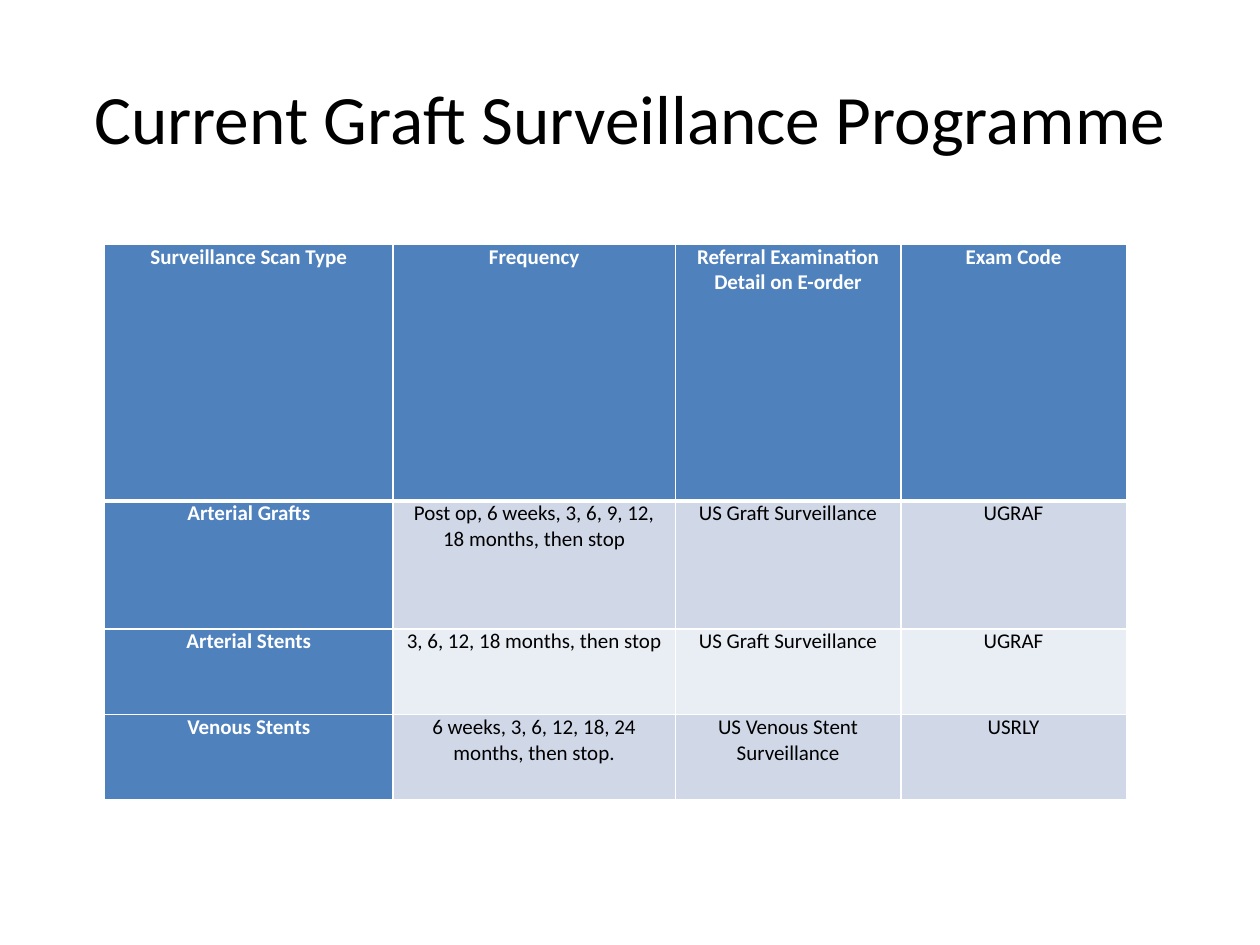
from dataclasses import dataclass

from lxml import etree
from pptx import Presentation
from pptx.dml.color import RGBColor
from pptx.enum.text import MSO_ANCHOR, PP_ALIGN
from pptx.oxml.ns import qn
from pptx.util import Inches, Pt

CENTER = PP_ALIGN.CENTER
MIDDLE = MSO_ANCHOR.MIDDLE
TITLE_ONLY = 5
SLIDE_SIZE = (10, 7.5)
TITLE_BOX = (0.5, 0.3, 9, 1.25)
SCHEDULE_BOX = (0.83, 1.94, 8.11, 4.41)
COLUMN_WEIGHTS = (2.29, 2.24, 1.79, 1.79)
ROW_WEIGHTS = (6, 3, 2, 2)
SCHEDULE = (
    ("Surveillance Scan Type", "Frequency",
     "Referral Examination Detail on E-order", "Exam Code"),
    ("Arterial Grafts", "Post op, 6 weeks, 3, 6, 9, 12, 18 months, then stop",
     "US Graft Surveillance", "UGRAF"),
    ("Arterial Stents", "3, 6, 12, 18 months, then stop",
     "US Graft Surveillance", "UGRAF"),
    ("Venous Stents", "6 weeks, 3, 6, 12, 18, 24 months, then stop.",
     "US Venous Stent Surveillance", "USRLY"),
)


@dataclass(frozen=True)
class Theme:
    """Colours, font and sizes of the slide."""
    font: str = "Calibri"
    ink: str = "000000"
    paper: str = "FFFFFF"
    heading: str = "4F81BD"
    bands: tuple = ("D0D8E8", "E9EDF4")
    title_size: float = 39.6
    body_size: float = 12
    rule: float = 1
    header_rule: float = 3


THEME = Theme()


def style_text(frame, size, color, bold=False):
    """Centre the paragraphs and format their runs."""
    for paragraph in frame.paragraphs:
        paragraph.alignment = CENTER
        for run in paragraph.runs:
            run.font.name = THEME.font
            run.font.size = Pt(size)
            run.font.bold = bold
            run.font.color.rgb = RGBColor.from_string(color)


def add_border(cell, side, width):
    """Draw one side of a cell in the paper colour."""
    properties = cell._tc.get_or_add_tcPr()
    line = etree.SubElement(properties, qn(f"a:ln{side}"), w=str(Pt(width)))
    fill = etree.SubElement(line, qn("a:solidFill"))
    etree.SubElement(fill, qn("a:srgbClr"), val=THEME.paper)


def add_title(slide, box, wording):
    """Place the slide title in its box."""
    title = slide.shapes.title
    title.left, title.top, title.width, title.height = map(Inches, box)
    title.text_frame.text = wording
    title.text_frame.word_wrap = True
    title.text_frame.vertical_anchor = MIDDLE
    style_text(title.text_frame, THEME.title_size, THEME.ink)


def fill_cell(cell, wording, row, column):
    """Write and format one cell according to its place in the table."""
    is_heading = row == 0 or column == 0
    cell.text_frame.text = wording
    cell.margin_left = cell.margin_right = Inches(0.07)
    cell.margin_top = cell.margin_bottom = 0
    style_text(cell.text_frame, THEME.body_size,
               THEME.paper if is_heading else THEME.ink, is_heading)
    for side in "LRTB":
        under_header = (row, side) in ((0, "B"), (1, "T"))
        add_border(cell, side, THEME.header_rule if under_header else THEME.rule)
    background = THEME.heading if is_heading else THEME.bands[(row - 1) % 2]
    cell.fill.solid()
    cell.fill.fore_color.rgb = RGBColor.from_string(background)


def add_schedule(slide, box, rows):
    """Build the surveillance table, sharing the box out by weight."""
    width, height = box[2:]
    table = slide.shapes.add_table(
        len(rows), len(rows[0]), *map(Inches, box)).table
    for column, weight in zip(table.columns, COLUMN_WEIGHTS):
        column.width = Inches(width * weight / sum(COLUMN_WEIGHTS))
    for row, weight in zip(table.rows, ROW_WEIGHTS):
        row.height = Inches(height * weight / sum(ROW_WEIGHTS))
    for r, wordings in enumerate(rows):
        for c, wording in enumerate(wordings):
            fill_cell(table.cell(r, c), wording, r, c)


def main():
    """Build and save the presentation."""
    deck = Presentation()
    deck.slide_width, deck.slide_height = map(Inches, SLIDE_SIZE)
    slide = deck.slides.add_slide(deck.slide_layouts[TITLE_ONLY])
    add_title(slide, TITLE_BOX, "Current Graft Surveillance Programme")
    add_schedule(slide, SCHEDULE_BOX, SCHEDULE)
    deck.save("out.pptx")


if __name__ == "__main__":
    main()
